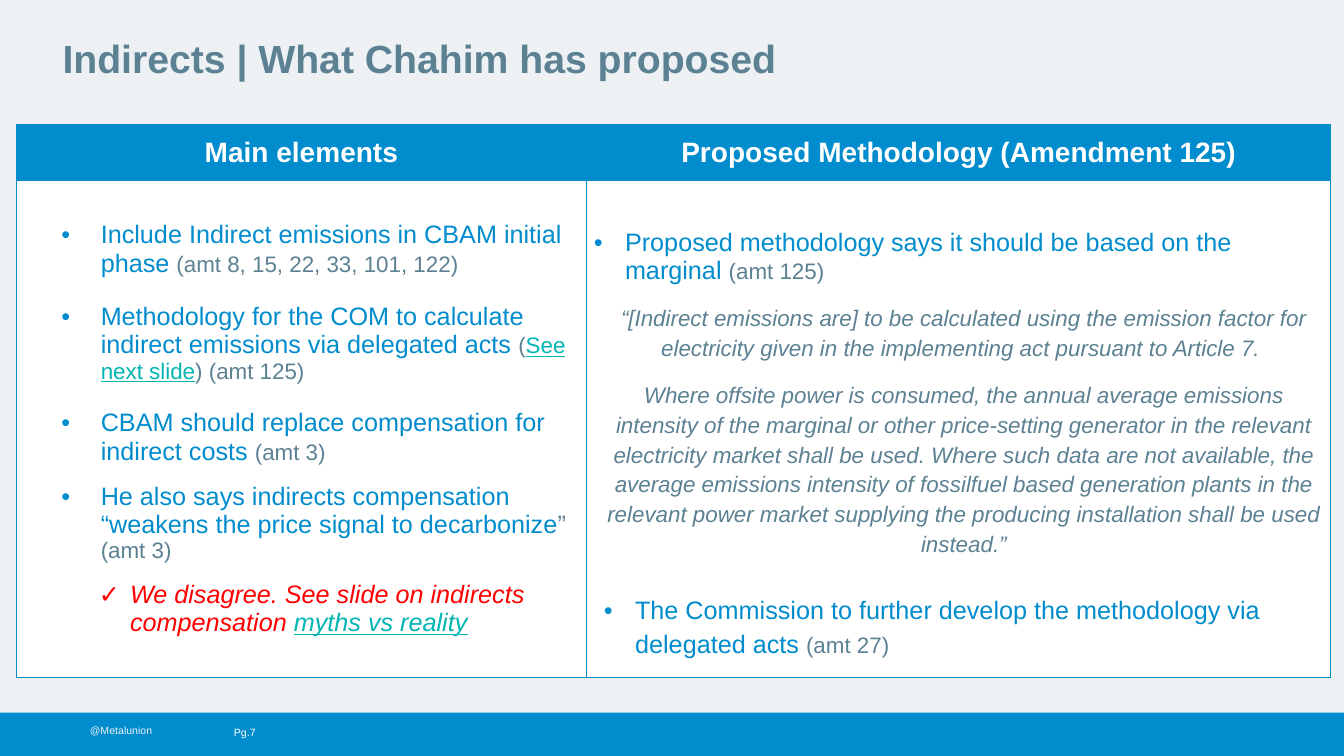
from dataclasses import dataclass

from lxml import etree
from pptx import Presentation
from pptx import util as u
from pptx.dml.color import RGBColor
from pptx.enum import shapes, text
from pptx.oxml.ns import qn

BLUE, SLATE, TEAL, RED = "008CCD", "5C8193", "01B5B3", "FF0000"
WHITE, PALE = "FFFFFF", "EDF1F4"
CENTER = text.PP_ALIGN.CENTER


@dataclass
class Span:
    words: str
    size: float = 18
    color: str = BLUE
    bold: bool = False
    italic: bool = False
    underline: bool = False


@dataclass
class Para:
    spans: list[Span]
    bullet: str = ""
    level: int = 0
    left: float = 0
    hanging: float = 0
    before: float = 0
    after: float = 0
    spacing: float = 1.0
    align: text.PP_ALIGN = text.PP_ALIGN.LEFT


@dataclass
class Label:
    left: float
    top: float
    width: float
    height: float
    para: Para
    anchor: text.MSO_ANCHOR = text.MSO_ANCHOR.TOP
    right_inset: float = 0


def rgb(color: str) -> RGBColor:
    return RGBColor.from_string(color)


def style(font, span: Span) -> None:
    font.name = "Arial"
    font.size = u.Pt(span.size)
    font.color.rgb = rgb(span.color)
    font.bold, font.italic, font.underline = span.bold, span.italic, span.underline


def write(frame, paras: list[Para]) -> None:
    for index, para in enumerate(paras):
        line = frame.add_paragraph() if index else frame.paragraphs[0]
        line.alignment, line.level = para.align, para.level
        line.line_spacing = para.spacing
        line.space_before, line.space_after = u.Pt(para.before), u.Pt(para.after)
        props = line._p.get_or_add_pPr()
        props.set("marL", str(u.Inches(para.left)))
        props.set("indent", str(u.Inches(-para.hanging)))
        if para.bullet:
            etree.SubElement(props, qn("a:buFont"), typeface="Arial")
            etree.SubElement(props, qn("a:buChar"), char=para.bullet)
        else:
            etree.SubElement(props, qn("a:buNone"))
        if len(para.spans) == 1:
            style(line.font, para.spans[0])
        for span in para.spans:
            run = line.add_run()
            run.text = span.words
            if len(para.spans) > 1:
                style(run.font, span)


def add_label(slide, label: Label) -> None:
    box = slide.shapes.add_textbox(
        u.Inches(label.left), u.Inches(label.top), u.Inches(label.width), u.Inches(label.height))
    frame = box.text_frame
    frame.word_wrap = True
    frame.vertical_anchor = label.anchor
    frame.margin_left = frame.margin_top = frame.margin_bottom = 0
    frame.margin_right = u.Inches(label.right_inset)
    write(frame, [label.para])


def fill_cell(cell, paras: list[Para], fill: str, top_inset: float = 0.04) -> None:
    cell.fill.solid()
    cell.fill.fore_color.rgb = rgb(fill)
    cell.vertical_anchor = text.MSO_ANCHOR.MIDDLE
    cell.margin_left = cell.margin_right = u.Inches(0.07)
    cell.margin_top, cell.margin_bottom = u.Inches(top_inset), u.Inches(0.04)
    props = cell._tc.get_or_add_tcPr()
    for index, side in enumerate(("a:lnL", "a:lnR", "a:lnT", "a:lnB")):
        border = etree.Element(qn(side), w=str(u.Pt(1)))
        solid = etree.SubElement(border, qn("a:solidFill"))
        etree.SubElement(solid, qn("a:srgbClr"), val=BLUE)
        props.insert(index, border)
    write(cell.text_frame, paras)


def note(words: str) -> Span:
    """Smaller grey reference after a statement."""
    return Span(words, 16, SLATE)


def element(*spans: Span, after: float) -> Para:
    """Bullet of the left column."""
    return Para(list(spans), "•", 1, 0.77, 0.39, after=after)


def quote(words: str, after: float = 0) -> Para:
    return Para([Span(words, 16, SLATE, italic=True)], left=0.1, before=12,
                after=after, spacing=1.2, align=CENTER)


def heading(words: str) -> list[Para]:
    return [Para([Span(words, 20, WHITE, bold=True)], align=CENTER)]


MAIN_ELEMENTS = [
    element(Span("Include Indirect emissions in CBAM initial phase "),
            note("(amt 8, 15, 22, 33, 101, 122)"), after=18),
    element(Span("Methodology for the COM to calculate indirect emissions via delegated acts "),
            note("("), Span("See next slide", 16, TEAL, underline=True),
            note(") (amt 125)"), after=18),
    element(Span("CBAM should replace compensation for indirect costs "),
            note("(amt 3)"), after=12),
    element(Span("He also says indirects compensation “weakens the price signal to decarbonize"),
            Span("” ", 18, SLATE), note("(amt 3)"), after=12),
    Para([Span("We disagree. See slide on indirects compensation ", color=RED, italic=True),
          Span("myths vs reality", color=TEAL, italic=True, underline=True)],
         "✓", 2, 1.06, 0.31, after=12),
]

METHODOLOGY = [
    Para([Span("Proposed methodology says it should be based on the marginal "),
          note("(amt 125)")], "•", 0, 0.31, 0.31),
    quote("“[Indirect emissions are] to be calculated using the emission factor for "
          "electricity given in the implementing act pursuant to Article 7. "),
    quote("Where offsite power is consumed, the annual average emissions intensity of the "
          "marginal or other price-setting generator in the relevant electricity market shall "
          "be used. Where such data are not available, the average emissions intensity of "
          "fossilfuel based generation plants in the relevant power market supplying the "
          "producing installation shall be used instead.”", after=12),
    Para([Span("The Commission to further develop the methodology via delegated acts "),
          note("(amt 27)")], "•", 0, 0.41, 0.31, before=12, spacing=1.2),
]

LABELS = [
    Label(0.89, 7.18, 1.22, 0.13, Para([Span("@Metalunion", 7.5, PALE)])),
    Label(2.32, 7.12, 0.55, 0.3, Para([Span("Pg.7", 7.5, WHITE)]), text.MSO_ANCHOR.MIDDLE),
    Label(0.62, 0.39, 8.18, 0.6,
          Para([Span("Indirects | What Chahim has proposed", 28, SLATE, bold=True)], spacing=0.9),
          right_inset=0.07),
]


def main() -> None:
    deck = Presentation()
    deck.slide_width, deck.slide_height = u.Inches(13.33), u.Inches(7.5)
    slide = deck.slides.add_slide(deck.slide_layouts[6])
    slide.background.fill.solid()
    slide.background.fill.fore_color.rgb = rgb(PALE)

    footer = slide.shapes.add_shape(
        shapes.MSO_SHAPE.RECTANGLE, 0, u.Inches(7.07), deck.slide_width, u.Inches(0.43))
    footer.shadow.inherit = False
    footer.fill.solid()
    footer.fill.fore_color.rgb = rgb(BLUE)
    footer.line.fill.background()
    for label in LABELS:
        add_label(slide, label)

    proposal = slide.shapes.add_table(
        2, 2, u.Inches(0.16), u.Inches(1.24), u.Inches(13.04), u.Inches(5.48)).table
    proposal.horz_banding = False
    for column, width in zip(proposal.columns, (5.66, 7.38)):
        column.width = u.Inches(width)
    for row, height in zip(proposal.rows, (0.55, 4.93)):
        row.height = u.Inches(height)
    fill_cell(proposal.cell(0, 0), heading("Main elements"), BLUE)
    fill_cell(proposal.cell(0, 1), heading("Proposed Methodology (Amendment 125)"), BLUE)
    fill_cell(proposal.cell(1, 0), MAIN_ELEMENTS, WHITE)
    fill_cell(proposal.cell(1, 1), METHODOLOGY, WHITE, top_inset=0.33)
    deck.save("out.pptx")


if __name__ == "__main__":
    main()
